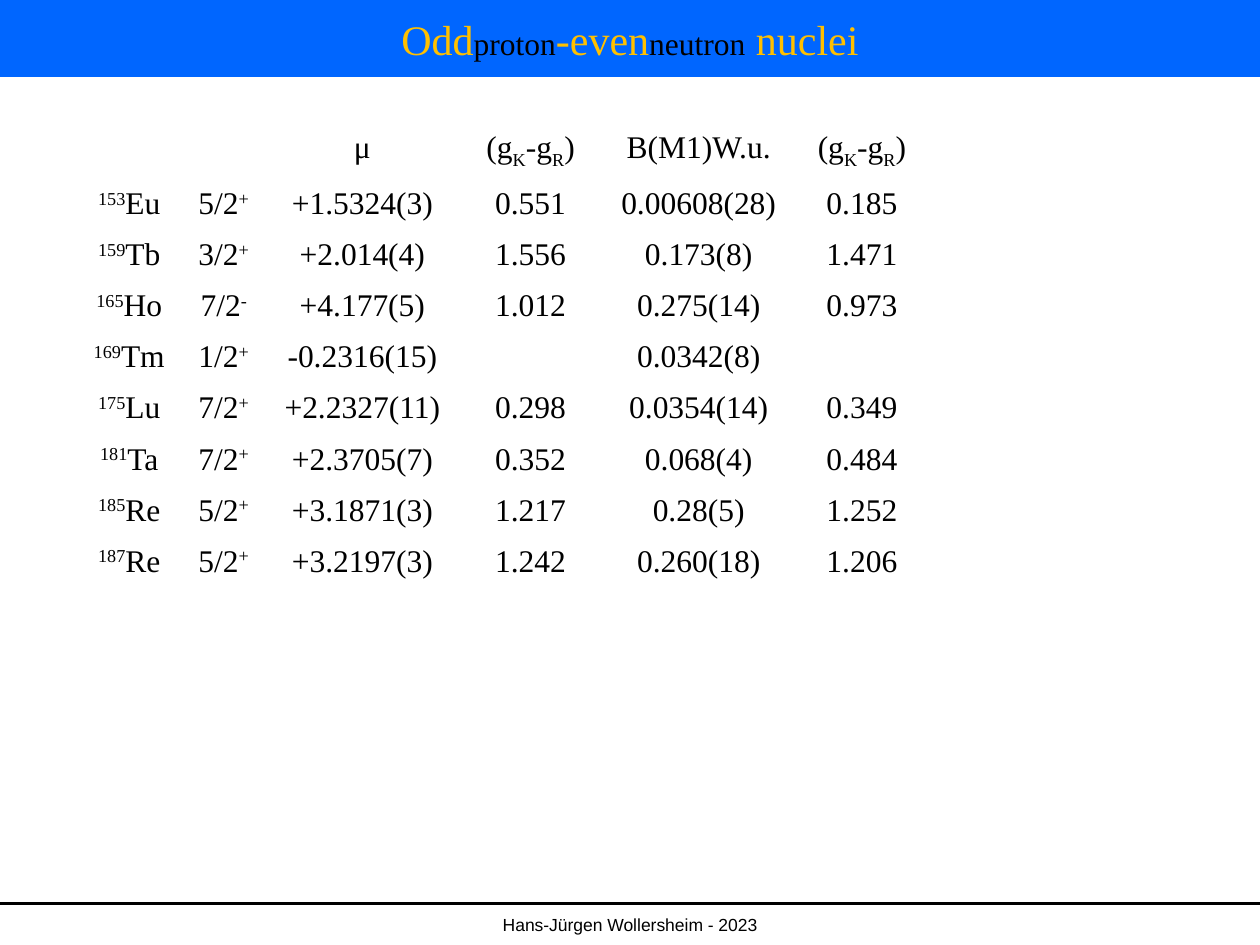
from dataclasses import dataclass

from lxml import etree
from pptx import Presentation
from pptx.dml.color import RGBColor
from pptx.enum.shapes import MSO_CONNECTOR, MSO_SHAPE
from pptx.enum.text import MSO_ANCHOR, PP_ALIGN
from pptx.oxml.ns import qn
from pptx.slide import Slide
from pptx.util import Cm, Pt

CENTER = PP_ALIGN.CENTER
MIDDLE = MSO_ANCHOR.MIDDLE
RECTANGLE = MSO_SHAPE.RECTANGLE
STRAIGHT = MSO_CONNECTOR.STRAIGHT

SLIDE_WIDTH = Cm(25.4)
SLIDE_HEIGHT = Cm(19.05)
BLACK = "000000"
BLUE = "0066FF"
GOLD = "FFC000"
SERIF = "Times New Roman"
SANS = "Arial"
SUPERSCRIPT = 30
SUBSCRIPT = -25
ROW_HEIGHT = Cm(1.03)
COLUMN_WIDTHS = (2.21, 1.6, 3.99, 2.79, 3.99, 2.59, 2.06, 2.74)


@dataclass(frozen=True)
class Run:
    text: str
    size: int = 18
    color: str = BLACK
    baseline: int = 0


@dataclass(frozen=True)
class Nucleus:
    mass: str
    symbol: str
    spin: str
    parity: str
    moment: str
    moment_factor: str
    strength: str
    strength_factor: str

    def cells(self) -> list[list[Run]]:
        values = (self.moment, self.moment_factor, self.strength, self.strength_factor)
        return [
            [Run(self.mass, baseline=SUPERSCRIPT), Run(self.symbol)],
            [Run(self.spin), Run(self.parity, baseline=SUPERSCRIPT)],
            *([Run(value)] if value else [] for value in values),
        ]


TITLE = [
    Run("Odd", 24, GOLD),
    Run("proton"),
    Run("-even", 24, GOLD),
    Run("neutron"),
    Run(" nuclei", 24, GOLD),
]
FACTOR = [
    Run("(g"),
    Run("K", baseline=SUBSCRIPT),
    Run("-g"),
    Run("R", baseline=SUBSCRIPT),
    Run(")"),
]
HEADER = [[], [], [Run("μ")], FACTOR, [Run("B(M1)W.u.")], FACTOR]
NUCLEI = [
    Nucleus("153", "Eu", "5/2", "+", "+1.5324(3)", "0.551", "0.00608(28)", "0.185"),
    Nucleus("159", "Tb", "3/2", "+", "+2.014(4)", "1.556", "0.173(8)", "1.471"),
    Nucleus("165", "Ho", "7/2", "-", "+4.177(5)", "1.012", "0.275(14)", "0.973"),
    Nucleus("169", "Tm", "1/2", "+", "-0.2316(15)", "", "0.0342(8)", ""),
    Nucleus("175", "Lu", "7/2", "+", "+2.2327(11)", "0.298", "0.0354(14)", "0.349"),
    Nucleus("181", "Ta", "7/2", "+", "+2.3705(7)", "0.352", "0.068(4)", "0.484"),
    Nucleus("185", "Re", "5/2", "+", "+3.1871(3)", "1.217", "0.28(5)", "1.252"),
    Nucleus("187", "Re", "5/2", "+", "+3.2197(3)", "1.242", "0.260(18)", "1.206"),
]


def rgb(value: str) -> RGBColor:
    return RGBColor.from_string(value)


def write_text(text_frame, runs: list[Run], *, font: str = SERIF) -> None:
    paragraph = text_frame.paragraphs[0]
    paragraph.alignment = CENTER
    for item in runs:
        run = paragraph.add_run()
        run.text = item.text
        run.font.name = font
        run.font.size = Pt(item.size)
        run.font.color.rgb = rgb(item.color)
        if item.baseline:
            run.font._element.set("baseline", str(item.baseline * 1000))


def add_title(slide: Slide) -> None:
    shape = slide.shapes.add_shape(RECTANGLE, 0, 0, SLIDE_WIDTH, Cm(1.55))
    shape.shadow.inherit = False
    shape.fill.solid()
    shape.fill.fore_color.rgb = rgb(BLUE)
    shape.line.fill.background()
    shape.text_frame.vertical_anchor = MIDDLE
    write_text(shape.text_frame, TITLE)


def add_footer(slide: Slide) -> None:
    top = Cm(18.21)
    connector = slide.shapes.add_connector(STRAIGHT, 0, top, SLIDE_WIDTH, top)
    connector.line.color.rgb = rgb(BLACK)
    connector.line.width = Pt(1.5)
    etree.SubElement(connector._element.spPr, qn("a:effectLst"))
    shape = slide.shapes.add_textbox(0, Cm(18.31), SLIDE_WIDTH, Cm(0.74))
    shape.text_frame.word_wrap = True
    write_text(shape.text_frame, [Run("Hans-Jürgen Wollersheim - 2023", 10)], font=SANS)


def add_nuclei_table(slide: Slide) -> None:
    rows = [HEADER, *(nucleus.cells() for nucleus in NUCLEI)]
    table = slide.shapes.add_table(
        len(rows), len(COLUMN_WIDTHS), Cm(1.5), Cm(2.51),
        Cm(sum(COLUMN_WIDTHS)), ROW_HEIGHT * len(rows),
    ).table
    table.first_row = False
    table.horz_banding = False
    for column, width in zip(table.columns, COLUMN_WIDTHS):
        column.width = Cm(width)
    for row in table.rows:
        row.height = ROW_HEIGHT
    for cell in table.iter_cells():
        cell.fill.background()
    for row, contents in zip(table.rows, rows):
        for cell, runs in zip(row.cells, contents):
            write_text(cell.text_frame, runs)


def main() -> None:
    presentation = Presentation()
    presentation.slide_width = SLIDE_WIDTH
    presentation.slide_height = SLIDE_HEIGHT
    slide = presentation.slides.add_slide(presentation.slide_layouts[6])
    add_footer(slide)
    add_title(slide)
    add_nuclei_table(slide)
    presentation.save("out.pptx")


if __name__ == "__main__":
    main()
